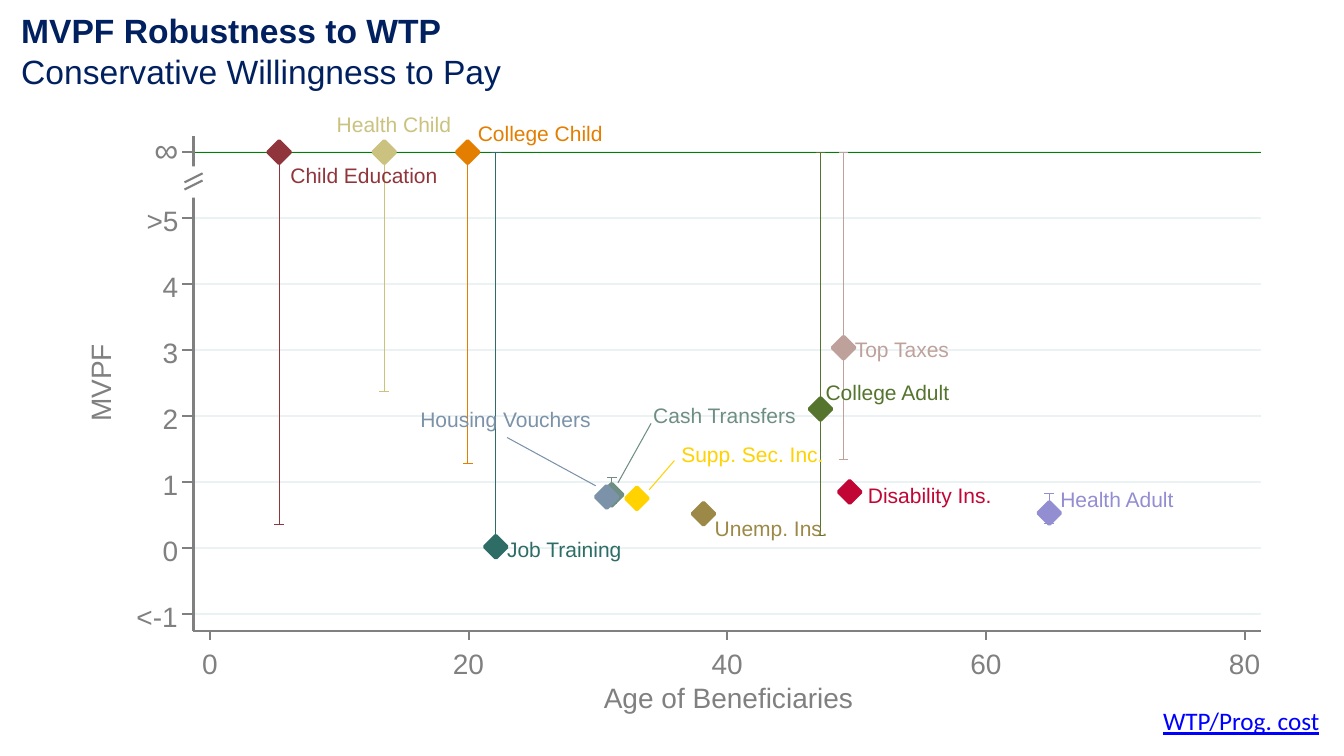
"""Draw the slide on MVPF robustness under conservative willingness to pay."""

from dataclasses import dataclass
from typing import Optional, Union

import lxml.etree
import pptx
import pptx.dml.color
import pptx.enum.shapes
import pptx.enum.text
import pptx.oxml.ns
import pptx.shapes.autoshape
import pptx.shapes.shapetree
import pptx.util

Pt = pptx.util.Pt
RGBColor = pptx.dml.color.RGBColor
Shapes = Union[pptx.shapes.shapetree.SlideShapes, pptx.shapes.shapetree.GroupShapes]

WHITE = RGBColor(0xFF, 0xFF, 0xFF)
NAVY = RGBColor(0x00, 0x20, 0x60)
LINK_BLUE = RGBColor(0x00, 0x00, 0xFF)
AXIS_GREY = RGBColor(0x80, 0x80, 0x80)
GRID = RGBColor(0xEA, 0xF2, 0xF3)
INFINITY_GREEN = RGBColor(0x00, 0x80, 0x00)
SAGE = RGBColor(0x6E, 0x8E, 0x84)
MAROON = RGBColor(0x90, 0x35, 0x3B)
OLIVE = RGBColor(0x55, 0x75, 0x2F)
ORANGE = RGBColor(0xE3, 0x7E, 0x00)
CRIMSON = RGBColor(0xC1, 0x05, 0x34)
LAVENDER = RGBColor(0x93, 0x8D, 0xD2)
KHAKI = RGBColor(0xCA, 0xC2, 0x7E)
SLATE = RGBColor(0x7B, 0x92, 0xA8)
TEAL = RGBColor(0x2D, 0x6D, 0x66)
YELLOW = RGBColor(0xFF, 0xD2, 0x00)
ROSE = RGBColor(0xBF, 0xA1, 0x9C)
BROWN = RGBColor(0x9C, 0x88, 0x47)

PLOT_LEFT, PLOT_RIGHT = 138.2, 900.9
PLOT_TOP, PLOT_BOTTOM = 97.5, 450.6
INFINITY_Y = 108.7
ROW_STEP = 47.15
AGE_ZERO_X = 149.9
AGE_STEP = 184.8
TICK_WIDTHS = {1: 20.2, 2: 31.7, 3: 38.9}
ROW_LABELS = ["", ">5", "4", "3", "2", "1", "0", "<-1"]
AGES = ["0", "20", "40", "60", "80"]


@dataclass(frozen=True)
class Program:
    """One policy category: its estimate, interval, label and leader line."""

    name: str
    color: RGBColor
    x: float
    y: float
    high: float
    low: float
    label_left: float
    label_top: float
    label_width: float
    leader: Optional[tuple[float, float, float, float]] = None


PROGRAMS = [
    Program("Cash Transfers", SAGE, 437, 353.5, 341.3, 359.3, 466.6, 287.3, 114.5,
            (441.4, 344.9, 465.1, 302.4)),
    Program("Child Education", MAROON, 199.4, INFINITY_Y, INFINITY_Y, 374.4, 207.4, 115.9, 116.6),
    Program("College Adult", OLIVE, 586.1, 292.2, INFINITY_Y, 382.3, 589.7, 271.4, 100.8),
    Program("College Child", ORANGE, 334.1, INFINITY_Y, INFINITY_Y, 331.2, 341.3, 86.4, 100.8),
    Program("Disability Ins.", CRIMSON, 607, 351.4, 349.2, 352.8, 619.9, 344.9, 100.1),
    Program("Health Adult", LAVENDER, 749.5, 366.5, 352.8, 373.7, 757.4, 347.8, 92.2),
    Program("Health Child", KHAKI, 274.5, INFINITY_Y, INFINITY_Y, 279.4, 240.5, 79.9, 92.2),
    Program("Housing Vouchers", SLATE, 433.4, 355, 352.8, 356.4, 300.2, 290.2, 135.4,
            (362.2, 312.5, 425.5, 347)),
    Program("Job Training", TEAL, 354.2, 390.6, INFINITY_Y, 391, 362.2, 383, 93.6),
    Program("Supp. Sec. Inc.", YELLOW, 455, 356, 351.4, 361.4, 486.7, 315.4, 113,
            (463.7, 349.9, 481.7, 329)),
    Program("Top Taxes", ROSE, 602.6, 248.4, INFINITY_Y, 328.3, 610.6, 240.5, 80.6),
    Program("Unemp. Ins.", BROWN, 502.6, 367, 362.2, 370.8, 510.5, 367.9, 92.2),
]


def add_text(shapes: Shapes, text: str, *, left: float, top: float, width: float,
             height: float, size: float, color: RGBColor, font: str = "Arial",
             bold_lines: int = 0, underline: bool = False, wrap: bool = False,
             inset_x: float = 0, inset_y: float = 0, rotation: float = 0) -> None:
    """Add a text box with one paragraph for each line of the text."""
    box = shapes.add_textbox(Pt(left), Pt(top), Pt(width), Pt(height))
    box.rotation = rotation
    frame = box.text_frame
    frame.word_wrap = wrap
    frame.auto_size = pptx.enum.text.MSO_AUTO_SIZE.SHAPE_TO_FIT_TEXT
    frame.margin_left = frame.margin_right = Pt(inset_x)
    frame.margin_top = frame.margin_bottom = Pt(inset_y)
    for index, line in enumerate(text.split("\n")):
        para = frame.add_paragraph() if index else frame.paragraphs[0]
        span = para.add_run()
        span.text = line
        span.font.name = font
        span.font.size = Pt(size)
        span.font.bold = index < bold_lines
        span.font.underline = underline
        span.font.color.rgb = color


def add_line(shapes: Shapes, x1: float, y1: float, x2: float, y2: float,
             color: RGBColor, width: float) -> None:
    """Add a straight line without a shadow."""
    line = shapes.add_connector(pptx.enum.shapes.MSO_CONNECTOR.STRAIGHT,
                                Pt(x1), Pt(y1), Pt(x2), Pt(y2))
    line.line.color.rgb = color
    line.line.width = Pt(width)
    lxml.etree.SubElement(line._element.spPr, pptx.oxml.ns.qn("a:effectLst"))


def paint(shape: pptx.shapes.autoshape.Shape, color: RGBColor, width: float) -> None:
    """Give a shape one colour for fill and outline; width 0 means no outline."""
    shape.shadow.inherit = False
    shape.fill.solid()
    shape.fill.fore_color.rgb = color
    if width:
        shape.line.color.rgb = color
        shape.line.width = Pt(width)
    else:
        shape.line.fill.background()


def add_panel(shapes: Shapes, left: float, top: float, width: float, height: float,
              outline: float) -> None:
    """Add a white rectangle."""
    panel = shapes.add_shape(pptx.enum.shapes.MSO_SHAPE.RECTANGLE,
                             Pt(left), Pt(top), Pt(width), Pt(height))
    paint(panel, WHITE, outline)


def add_interval(shapes: Shapes, program: Program) -> None:
    """Add the confidence interval with its two caps."""
    add_line(shapes, program.x, program.low, program.x, program.high, program.color, 0.75)
    for y in (program.high, program.low):
        add_line(shapes, program.x - 3.5, y, program.x + 3.5, y, program.color, 0.75)


def add_marker(shapes: Shapes, program: Program, half: float = 8) -> None:
    """Add the diamond at the estimate."""
    x, y = program.x, program.y
    outline = shapes.build_freeform(Pt(x), Pt(y - half))
    corners = [(x - half, y), (x, y + half), (x + half, y)]
    outline.add_line_segments([(Pt(a), Pt(b)) for a, b in corners], close=True)
    paint(outline.convert_to_shape(), program.color, 2.5)


def add_label(shapes: Shapes, program: Program) -> None:
    """Add the program name and, where present, its leader line."""
    add_text(shapes, program.name, left=program.label_left, top=program.label_top,
             width=program.label_width, height=21.6, size=15, color=program.color)
    if program.leader:
        add_line(shapes, *program.leader, program.color, 0.75)


def add_axes(shapes: Shapes) -> None:
    """Add both axes with ticks, tick labels and titles."""
    add_line(shapes, PLOT_LEFT, PLOT_BOTTOM, PLOT_LEFT, PLOT_TOP, AXIS_GREY, 1.5)
    add_line(shapes, PLOT_LEFT, PLOT_BOTTOM, PLOT_RIGHT, PLOT_BOTTOM, AXIS_GREY, 1.5)
    for row, text in enumerate(ROW_LABELS):
        y = INFINITY_Y + row * ROW_STEP
        add_line(shapes, PLOT_LEFT, y, PLOT_LEFT - 7.9, y, AXIS_GREY, 1.5)
        if text:
            width = TICK_WIDTHS[len(text)]
            add_text(shapes, text, left=136.4 - width, top=y - 10.6, width=width,
                     height=28, size=20, color=AXIS_GREY)
    for column, text in enumerate(AGES):
        x = AGE_ZERO_X + column * AGE_STEP
        add_line(shapes, x, PLOT_BOTTOM, x, PLOT_BOTTOM + 6.6, AXIS_GREY, 1.5)
        add_text(shapes, text, left=x - 5.6 * len(text), top=461.5,
                 width=TICK_WIDTHS[len(text)], height=28, size=20, color=AXIS_GREY)
    add_text(shapes, "MVPF", left=41, top=254.9, width=64.8, height=28, size=20,
             color=AXIS_GREY, rotation=270)
    add_text(shapes, "Age of Beneficiaries", left=431.3, top=486, width=188.6, height=28,
             size=20, color=AXIS_GREY)


def add_axis_break(shapes: Shapes) -> None:
    """Add the break in the vertical axis and the infinity label as one group."""
    group = shapes.add_group_shape().shapes
    add_panel(group, 115.9, 118.8, 41.8, 22.3, 0)
    add_line(group, PLOT_LEFT, 131.8, PLOT_LEFT, 127.4, WHITE, 3)
    for y in (130.3, 135.4):
        add_line(group, 131.8, y, 144.7, y - 6.5, AXIS_GREY, 1.5)
    add_text(group, "∞", left=110.2, top=92.2, width=17.3, height=28.8, size=24,
             color=AXIS_GREY)


def main() -> None:
    """Build and save the deck."""
    deck = pptx.Presentation()
    deck.slide_width, deck.slide_height = Pt(960), Pt(540)
    shapes = deck.slides.add_slide(deck.slide_layouts[6]).shapes
    add_text(shapes, "MVPF Robustness to WTP\nConservative Willingness to Pay", left=15.1,
             top=7.2, width=836.6, height=58.3, size=24, color=NAVY, bold_lines=1, wrap=True)
    add_text(shapes, "WTP/Prog. cost", left=823.7, top=500.4, width=127.4, height=28.8, size=18,
             color=LINK_BLUE, font="Calibri", underline=True, inset_x=7.2, inset_y=3.6)
    add_panel(shapes, PLOT_LEFT, PLOT_TOP, 763.2, 353.5, 1.13)
    for row in reversed(range(len(ROW_LABELS))):
        y = INFINITY_Y + row * ROW_STEP
        add_line(shapes, PLOT_LEFT, y, PLOT_RIGHT, y, GRID, 1.5)
    add_line(shapes, PLOT_LEFT, INFINITY_Y, PLOT_RIGHT, INFINITY_Y, INFINITY_GREEN, 0.75)
    for draw in (add_interval, add_marker, add_label):
        for program in PROGRAMS:
            draw(shapes, program)
    add_axes(shapes)
    add_axis_break(shapes)
    deck.save("out.pptx")


if __name__ == "__main__":
    main()
